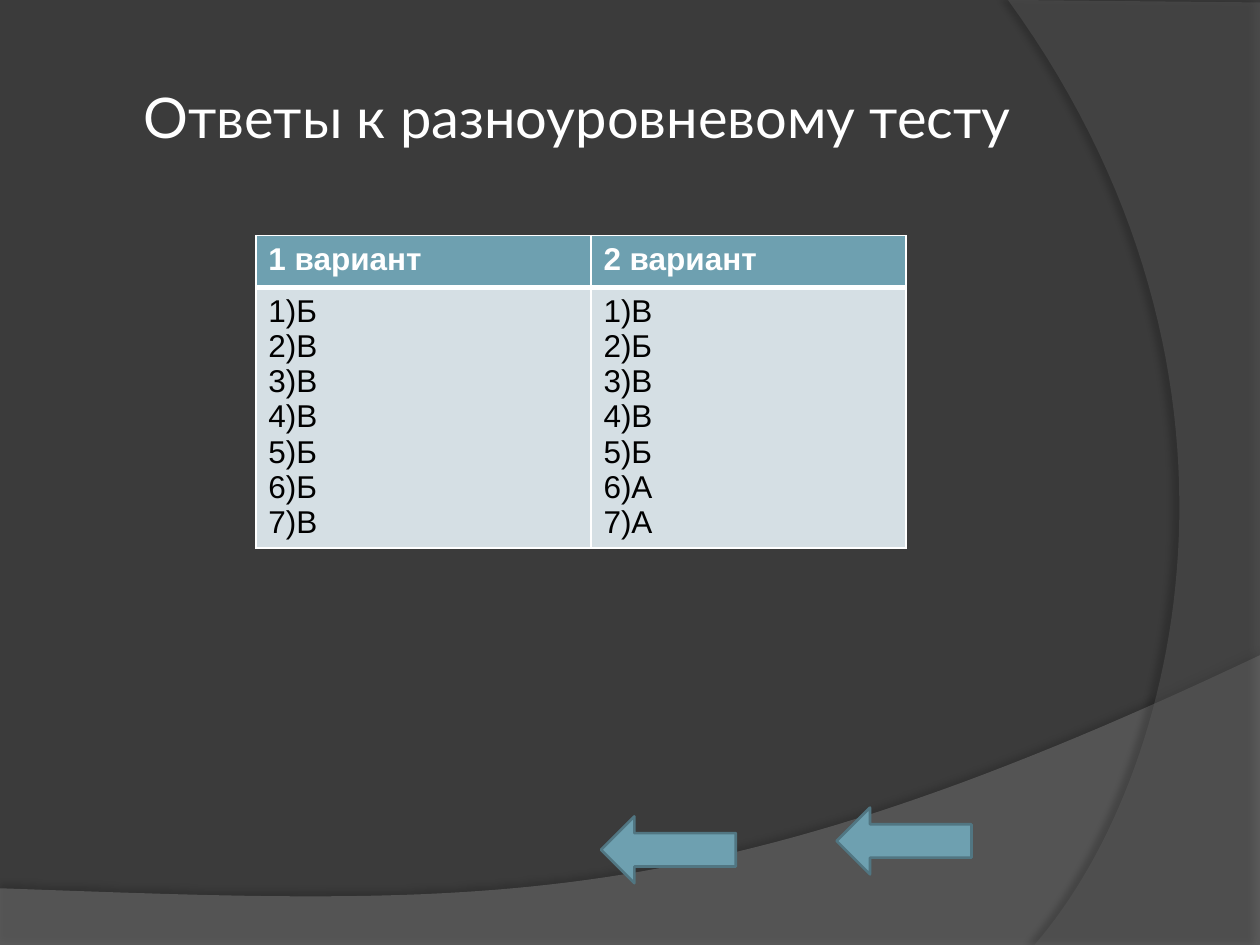
from lxml.etree import SubElement
from pptx import Presentation
from pptx.dml.color import RGBColor
from pptx.enum.shapes import MSO_SHAPE
from pptx.enum.text import MSO_ANCHOR, PP_ALIGN
from pptx.oxml.ns import qn
from pptx.util import Inches, Pt

WHITE, TEAL, PALE = "FFFFFF", "6EA0B0", "D5DFE4"
ANSWERS = {"1 вариант": "БВВВББВ", "2 вариант": "ВБВВБАА"}


def rgb(color):
    return RGBColor.from_string(color)


def format_font(p, name, size, color, bold=False):
    for r in p.runs:
        r.font.name = name
        r.font.size = Pt(size)
        r.font.bold = bold
        r.font.color.rgb = rgb(color)


def bezier(p0, p1, p2, p3, steps=60):
    """Points along a cubic curve, both ends included."""
    points = []
    for i in range(steps + 1):
        t = i / steps
        u = 1 - t
        weights = (u**3, 3 * u * u * t, 3 * u * t * t, t**3)
        points.append(tuple(sum(w * c for w, c in zip(weights, axis))
                            for axis in zip(p0, p1, p2, p3)))
    return points


def add_color(parent, color, opacity):
    clr = SubElement(parent, qn("a:srgbClr"), val=color)
    SubElement(clr, qn("a:alpha"), val=str(opacity * 1000))


def add_wave(slide, points, color, opacity, shadow):
    """Translucent outline; shadow is (opacity, blur, distance, direction)."""
    start, *rest = [(Inches(x), Inches(y)) for x, y in points]
    builder = slide.shapes.build_freeform(*start)
    builder.add_line_segments(rest, close=True)
    sp = builder.convert_to_shape()
    sp.line.fill.background()
    sp.fill.solid()
    sp.fill.fore_color.rgb = rgb(color)
    sp_pr = sp._element.spPr
    fill = sp_pr.find(qn("a:solidFill"))
    fill.clear()
    add_color(fill, color, opacity)
    dark, blur, distance, direction = shadow
    effects = SubElement(sp_pr, qn("a:effectLst"))
    outer = SubElement(effects, qn("a:outerShdw"), blurRad=str(Pt(blur)),
                       dist=str(Pt(distance)), dir=str(direction * 60000),
                       algn="ctr", rotWithShape="0")
    add_color(outer, "000000", dark)


def set_title(slide, text):
    title = slide.shapes.title
    title.left, title.top = Inches(0.5), Inches(0.3)
    title.width, title.height = Inches(8.17), Inches(1.25)
    tf = title.text_frame
    tf.text = text
    tf.vertical_anchor = MSO_ANCHOR.MIDDLE
    tf.margin_left = tf.margin_right = Inches(0.05)
    tf.margin_top = tf.margin_bottom = Inches(0.05)
    p = tf.paragraphs[0]
    p.alignment = PP_ALIGN.CENTER
    format_font(p, "Lato", 32, WHITE)
    slide.shapes._spTree.append(title._element)  # in front of the waves


def set_borders(cell, **widths):
    tc_pr = cell._tc.get_or_add_tcPr()
    for i, side in enumerate(("lnL", "lnR", "lnT", "lnB")):
        ln = tc_pr.makeelement(qn("a:" + side), w=str(Pt(widths.get(side, 1))))
        fill = SubElement(ln, qn("a:solidFill"))
        SubElement(fill, qn("a:srgbClr"), val=WHITE)
        tc_pr.insert(i, ln)


def fill_cell(cell, text, fill, color, bold, **widths):
    cell.text = text
    for p in cell.text_frame.paragraphs:
        format_font(p, "Arial", 18, color, bold)
    cell.fill.solid()
    cell.fill.fore_color.rgb = rgb(fill)
    set_borders(cell, **widths)


def add_answer_table(slide):
    table = slide.shapes.add_table(2, 2, Inches(2.03), Inches(1.87),
                                   Inches(5.16), Inches(2.48)).table
    for column, width in zip(table.columns, (2.66, 2.5)):
        column.width = Inches(width)
    for row, height in zip(table.rows, (0.41, 2.07)):
        row.height = Inches(height)
    for col, (variant, letters) in enumerate(ANSWERS.items()):
        lines = [f"{n}){letter}" for n, letter in enumerate(letters, 1)]
        fill_cell(table.cell(0, col), variant, TEAL, WHITE, True, lnB=3)
        fill_cell(table.cell(1, col), "\n".join(lines), PALE, "000000", False,
                  lnT=3)


def add_back_arrow(slide, left, top):
    sp = slide.shapes.add_shape(MSO_SHAPE.LEFT_ARROW, Inches(left), Inches(top),
                                Inches(1.07), Inches(0.53))
    sp.shadow.inherit = False
    sp.fill.solid()
    sp.fill.fore_color.rgb = rgb(TEAL)
    sp.line.color.rgb = rgb("517682")
    sp.line.width = Pt(1.5)


def main():
    prs = Presentation()
    prs.slide_width, prs.slide_height = Inches(10), Inches(7.5)
    slide = prs.slides.add_slide(prs.slide_layouts[5])
    slide.background.fill.solid()
    slide.background.fill.fore_color.rgb = rgb("3B3B3B")

    bottom = bezier((10, 5.2), (5.59, 7.29), (3.91, 7.19), (0, 7.05))
    add_wave(slide, [(0, 7.51), (10, 7.51)] + bottom, "7F7F7F", 45,
             (35, 4, 3.5, 270))
    side = bezier((8.21, 7.5), (9.35, 6.19), (10.18, 3), (8, 0))
    add_wave(slide, [(10, 0.02), (10, 7.5)] + side, "5E5E5E", 40,
             (45, 4, 4, 180))

    set_title(slide, "Ответы к разноуровневому тесту")
    add_answer_table(slide)
    for left, top in ((4.77, 6.48), (6.64, 6.41)):
        add_back_arrow(slide, left, top)
    prs.save("out.pptx")


if __name__ == "__main__":
    main()
